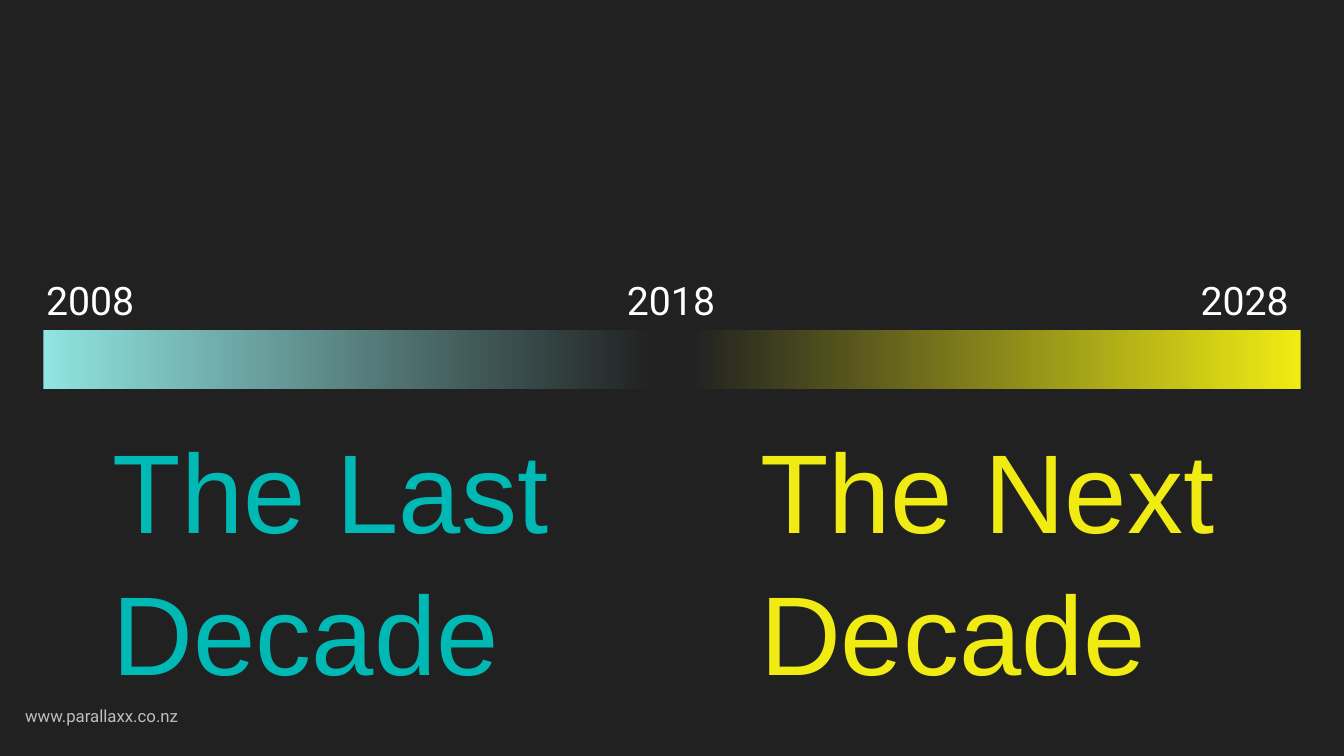
import pptx
import pptx.dml.color
import pptx.enum.shapes
import pptx.enum.text
import pptx.util
from pptx.util import Inches

FORMATS = {
    "footer": {"size": pptx.util.Pt(12), "name": "Roboto"},
    "year": {"size": pptx.util.Pt(28), "name": "Roboto"},
    "heading": {"size": pptx.util.Pt(80), "name": "Arial"},
}
BACKGROUND, WHITE, GREY = "212121", "FFFFFF", "BFBFBF"
AQUA, TEAL, YELLOW = "90E4E1", "00B9B5", "EFEB13"


def rgb(value):
    return pptx.dml.color.RGBColor.from_string(value)


class Deck:
    """Hold the presentation, its style and the current slide."""

    def __init__(self, width, height):
        self.prs = pptx.Presentation()
        self.prs.slide_width, self.prs.slide_height = Inches(width), Inches(height)
        self.slide = None

    def add_slide(self, color):
        self.slide = self.prs.slides.add_slide(self.prs.slide_layouts[6])
        fill = self.slide.background.fill
        fill.solid()
        fill.fore_color.rgb = rgb(color)

    def add_bar(self, left, top, width, height, color, rotation=0):
        sp = self.slide.shapes.add_shape(
            pptx.enum.shapes.MSO_SHAPE.RECTANGLE,
            Inches(left), Inches(top), Inches(width), Inches(height))
        sp.shadow.inherit = False
        sp.rotation = rotation
        sp.line.fill.background()
        sp.fill.gradient()
        sp.fill.gradient_angle = 0
        for stop, value in zip(sp.fill.gradient_stops, (color, BACKGROUND)):
            stop.color.rgb = rgb(value)

    def add_text(self, text, left, top, width, height, kind, color, wrap=False, spacing=1.0):
        sp = self.slide.shapes.add_textbox(
            Inches(left), Inches(top), Inches(width), Inches(height))
        tf = sp.text_frame
        tf.word_wrap = wrap
        tf.auto_size = pptx.enum.text.MSO_AUTO_SIZE.SHAPE_TO_FIT_TEXT
        p = tf.paragraphs[0]
        p.line_spacing = spacing
        r = p.add_run()
        r.text = text
        for key, value in FORMATS[kind].items():
            setattr(r.font, key, value)
        r.font.color.rgb = rgb(color)


def main():
    deck = Deck(13.33, 7.5)
    deck.add_slide(BACKGROUND)
    deck.add_text("www.parallaxx.co.nz", 0.15, 6.95, 1.75, 0.3, "footer", GREY)
    for left, color, rotation in ((0.43, AQUA, 0), (6.83, YELLOW, 180)):
        deck.add_bar(left, 3.27, 6.07, 0.59, color, rotation)
    for year, left in (("2008", 0.36), ("2018", 6.12), ("2028", 11.81)):
        deck.add_text(year, left, 2.69, 1.09, 0.57, "year", WHITE)
    for text, left, width, color in (("The Last Decade", 1.02, 4.74, TEAL),
                                     ("The Next Decade", 7.44, 4.91, YELLOW)):
        deck.add_text(text, left, 4.07, width, 2.78, "heading", color, True, 1.05)
    deck.prs.save("out.pptx")


if __name__ == "__main__":
    main()
